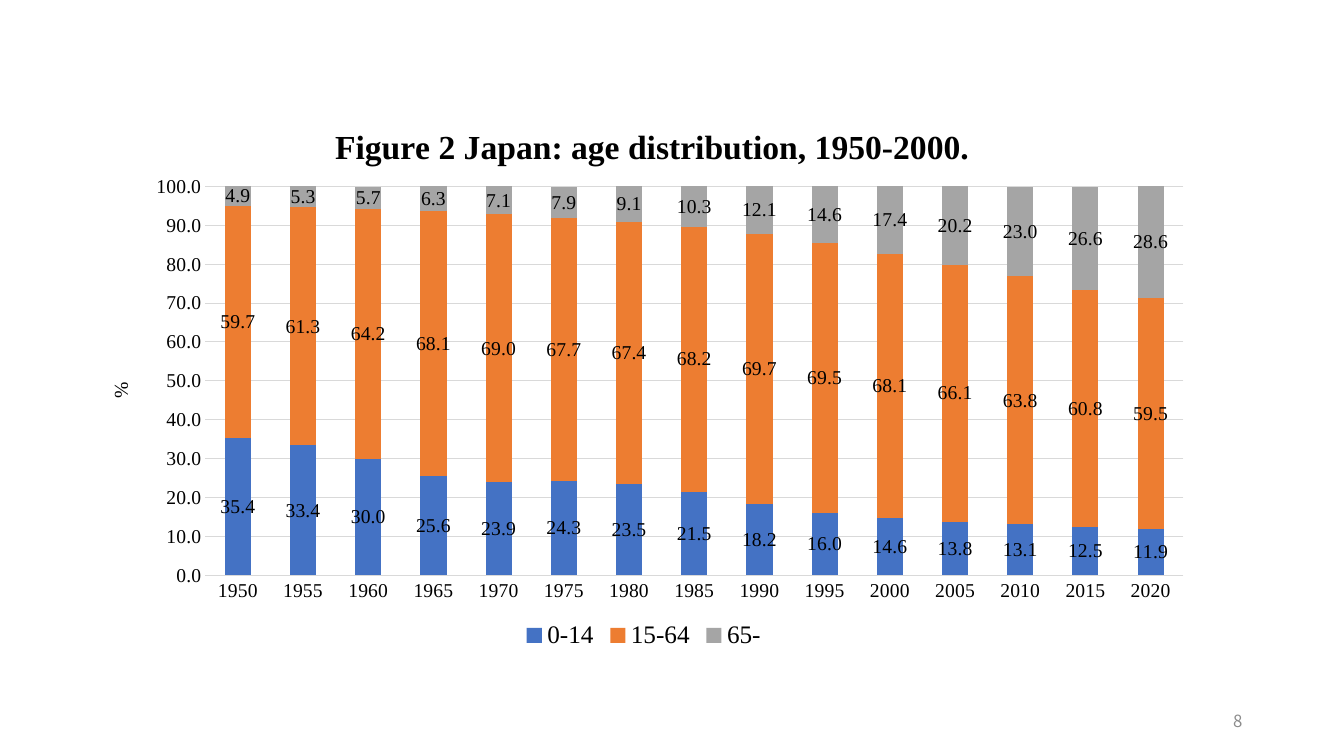
from dataclasses import dataclass
from typing import Optional

from lxml.etree import SubElement
from pptx import Presentation
from pptx.chart.data import CategoryChartData
from pptx.dml.color import RGBColor
from pptx.enum.chart import XL_CHART_TYPE as ChartType
from pptx.enum.chart import XL_LEGEND_POSITION as LegendPosition
from pptx.enum.chart import XL_TICK_MARK as TickMark
from pptx.enum.text import MSO_ANCHOR, PP_ALIGN
from pptx.oxml.ns import qn
from pptx.util import Inches, Pt


@dataclass(frozen=True)
class Theme:
    font: str = "Times New Roman"
    number_font: str = "Noto Sans CJK JP"
    ink: str = "000000"
    muted: str = "8C8C8C"
    grid: str = "D9D9D9"
    title_size: int = 24
    legend_size: int = 18
    label_size: int = 14
    number_size: int = 12
    line_width: float = 0.75


@dataclass(frozen=True)
class AgeGroup:
    name: str
    color: str
    shares: tuple[float, ...]


@dataclass(frozen=True)
class Layout:
    """Place inside the chart, as fractions of its width and height."""
    x: float
    y: float
    w: Optional[float] = None
    h: Optional[float] = None


THEME = Theme()
YEARS = [str(year) for year in range(1950, 2021, 5)]
AGE_GROUPS = [
    AgeGroup("0-14", "4472C4", (35.4, 33.4, 30, 25.6, 23.9, 24.3, 23.5, 21.5,
                                18.2, 16, 14.6, 13.8, 13.1, 12.5, 11.9)),
    AgeGroup("15-64", "ED7D31", (59.7, 61.3, 64.2, 68.1, 69, 67.7, 67.4, 68.2,
                                 69.7, 69.5, 68.1, 66.1, 63.8, 60.8, 59.5)),
    AgeGroup("65-", "A5A5A5", (4.9, 5.3, 5.7, 6.3, 7.1, 7.9, 9.1, 10.3,
                               12.1, 14.6, 17.4, 20.2, 23, 26.6, 28.6)),
]


def rgb(color: str) -> RGBColor:
    return RGBColor.from_string(color)


def style_font(font, size: int, color: str = THEME.ink,
               name: str = THEME.font, bold: bool = False) -> None:
    font.name, font.size, font.bold = name, Pt(size), bold
    font.color.rgb = rgb(color)


def style_line(line) -> None:
    line.color.rgb = rgb(THEME.grid)
    line.width = Pt(THEME.line_width)


def set_layout(element, place: Layout) -> None:
    """Fix the place of a plot area or a title within the chart."""
    for old in element.findall(qn("c:layout")):
        element.remove(old)
    layout = SubElement(element, qn("c:layout"))
    manual = SubElement(layout, qn("c:manualLayout"))
    tx = element.find(qn("c:tx"))
    if tx is None:
        element.insert(0, layout)
        SubElement(manual, qn("c:layoutTarget")).set("val", "inner")
    else:
        tx.addnext(layout)
    for axis in "xy":
        SubElement(manual, qn(f"c:{axis}Mode")).set("val", "edge")
    for key in "xywh":
        value = getattr(place, key)
        if value is not None:
            SubElement(manual, qn(f"c:{key}")).set("val", str(value))


def write_title(title, text: str, size: int, bold: bool, place: Layout) -> None:
    r = title.text_frame.paragraphs[0].add_run()
    r.text = text
    style_font(r.font, size, bold=bold)
    set_layout(title.element, place)


def format_axes(chart) -> None:
    years, percent = chart.category_axis, chart.value_axis
    for axis in (years, percent):
        axis.major_tick_mark = axis.minor_tick_mark = TickMark.NONE
        style_font(axis.tick_labels.font, THEME.label_size)
    style_line(years.format.line)
    percent.format.line.fill.background()
    percent.minimum_scale, percent.maximum_scale = 0, 100
    percent.major_unit = 10
    percent.tick_labels.number_format = "0.0"
    percent.tick_labels.number_format_is_linked = False
    percent.has_major_gridlines = True
    style_line(percent.major_gridlines.format.line)
    write_title(percent.axis_title, "%", THEME.label_size, False,
                Layout(0.02, 0.51))


def format_columns(chart) -> None:
    plot = chart.plots[0]
    plot.gap_width, plot.overlap = 150, 100
    plot.vary_by_categories = False
    for series, group in zip(plot.series, AGE_GROUPS):
        series.format.fill.solid()
        series.format.fill.fore_color.rgb = rgb(group.color)
        labels = series.data_labels
        labels.show_value = True
        labels.number_format = "0.0"
        labels.number_format_is_linked = False
        style_font(labels.font, THEME.label_size)


def add_age_chart(s) -> None:
    data = CategoryChartData(number_format="0.0")
    data.categories = YEARS
    for group in AGE_GROUPS:
        data.add_series(group.name, group.shares)
    chart = s.shapes.add_chart(
        ChartType.COLUMN_STACKED, Inches(0.81), Inches(0.9),
        Inches(11.15), Inches(5.59), data).chart
    style_font(chart.font, THEME.label_size)
    chart.has_title = True
    write_title(chart.chart_title, "Figure 2 Japan: age distribution, 1950-2000.",
                THEME.title_size, True, Layout(0.22, 0.05))
    chart.has_legend = True
    chart.legend.position = LegendPosition.BOTTOM
    chart.legend.include_in_layout = False
    style_font(chart.legend.font, THEME.legend_size)
    format_axes(chart)
    format_columns(chart)
    set_layout(chart.element.find(".//" + qn("c:plotArea")),
               Layout(0.11, 0.17, 0.87, 0.69))


def add_slide_number(s, number: str) -> None:
    tf = s.shapes.add_textbox(Inches(9.42), Inches(6.95),
                              Inches(3), Inches(0.4)).text_frame
    tf.word_wrap = True
    tf.vertical_anchor = MSO_ANCHOR.MIDDLE
    p = tf.paragraphs[0]
    p.alignment = PP_ALIGN.RIGHT
    r = p.add_run()
    r.text = number
    style_font(r.font, THEME.number_size, THEME.muted, THEME.number_font)


def main() -> None:
    prs = Presentation()
    prs.slide_width, prs.slide_height = Inches(13.33), Inches(7.5)
    s = prs.slides.add_slide(prs.slide_layouts[6])
    add_slide_number(s, "8")
    add_age_chart(s)
    prs.save("out.pptx")


if __name__ == "__main__":
    main()
